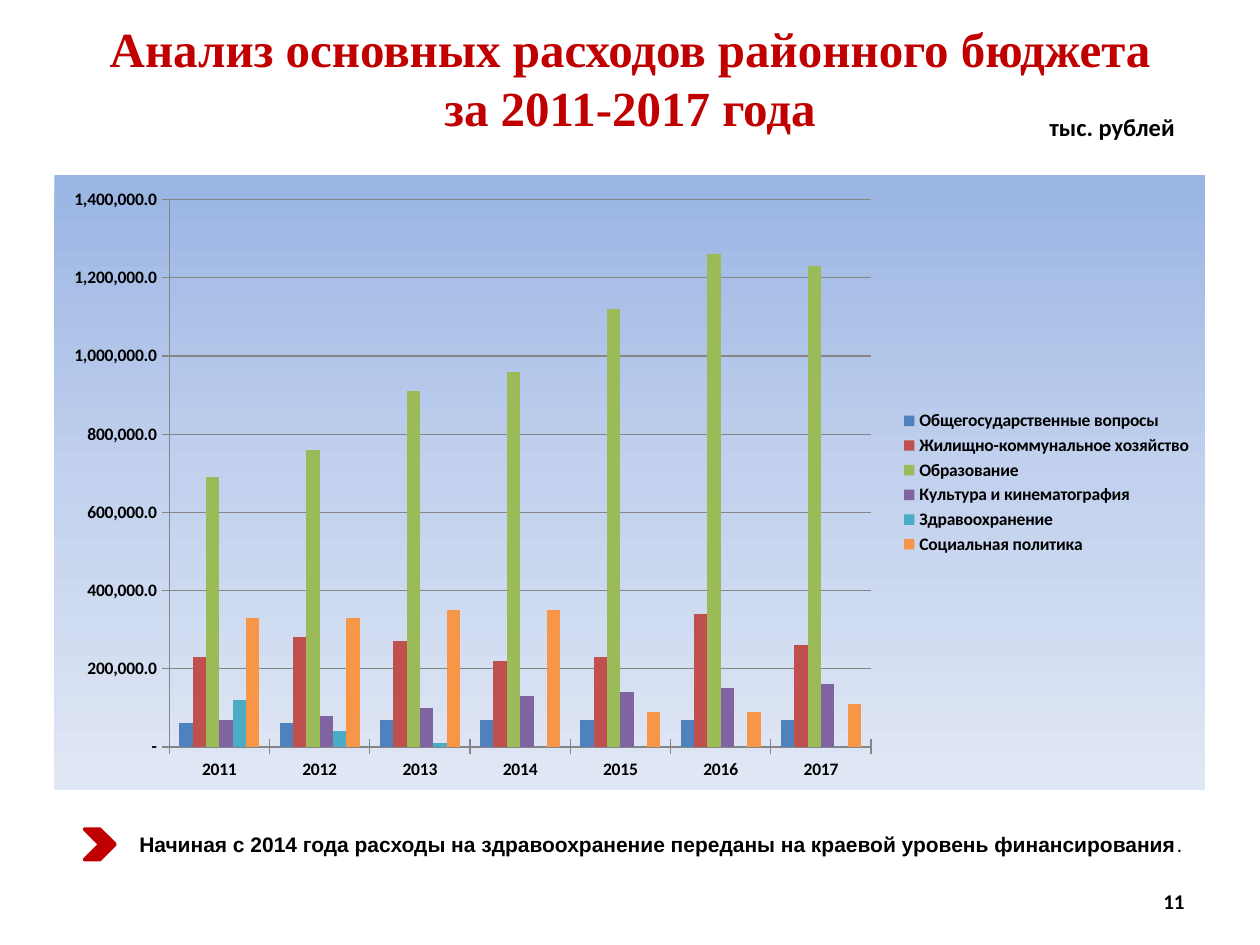
import dataclasses

import pptx
import pptx.chart.data
import pptx.dml.color
import pptx.enum.chart
import pptx.enum.shapes
import pptx.enum.text
import pptx.oxml
import pptx.util

Pt = pptx.util.Pt
RGB = pptx.dml.color.RGBColor.from_string
ALIGN = pptx.enum.text.PP_ALIGN
ANCHOR = pptx.enum.text.MSO_ANCHOR
CHART = pptx.enum.chart
NS = ('xmlns:c="http://schemas.openxmlformats.org/drawingml/2006/chart" '
      'xmlns:a="http://schemas.openxmlformats.org/drawingml/2006/main"')


@dataclasses.dataclass(frozen=True)
class Theme:
    accent: str = "C00000"
    ink: str = "000000"
    axis: str = "868686"
    series: tuple = ("4F81BD", "C0504D", "9BBB59", "8064A2", "4BACC6", "F79646")
    backdrop: tuple = ((0, "9AB5E4"), (50, "C2D1ED"), (100, "E1E8F5"))
    heading_font: str = "Times New Roman"
    body_font: str = "Calibri"
    note_font: str = "Arial"
    heading: int = 28
    unit: int = 14
    small: int = 12
    chart: int = 10


THEME = Theme()
YEARS = [str(year) for year in range(2011, 2018)]
# Thousands of thousand roubles, one value a year
SPENDING = {
    "Общегосударственные вопросы": (60, 60, 70, 70, 70, 70, 70),
    "Жилищно-коммунальное хозяйство": (230, 280, 270, 220, 230, 340, 260),
    "Образование": (690, 760, 910, 960, 1120, 1260, 1230),
    "Культура и кинематография": (70, 80, 100, 130, 140, 150, 160),
    "Здравоохранение": (120, 40, 10, 0, 0, 0, 0),
    "Социальная политика": (330, 330, 350, 350, 90, 90, 110),
}


def set_all(target, values):
    for name, value in values.items():
        setattr(target, name, value)


def style_font(font, face, size, color=THEME.ink, bold=True):
    set_all(font, {"name": face, "size": Pt(size), "bold": bold})
    font.color.rgb = RGB(color)


def add_label(slide, box, text, face, size, align, anchor=ANCHOR.MIDDLE, wrap=True):
    frame = slide.shapes.add_textbox(*map(Pt, box)).text_frame
    set_all(frame, {"word_wrap": wrap, "vertical_anchor": anchor})
    line = frame.paragraphs[0]
    line.alignment = align
    run = line.add_run()
    run.text = text
    style_font(run.font, face, size)
    return line


def add_heading(slide, box, lines):
    heading = slide.shapes.title
    set_all(heading, dict(zip(("left", "top", "width", "height"), map(Pt, box))))
    frame = heading.text_frame
    frame.text = "\n".join(lines)
    set_all(frame, {"word_wrap": True, "vertical_anchor": ANCHOR.MIDDLE,
                    "auto_size": pptx.enum.text.MSO_AUTO_SIZE.NONE})
    for line in frame.paragraphs:
        line.alignment = ALIGN.CENTER
        style_font(line.runs[0].font, THEME.heading_font, THEME.heading, THEME.accent)


def paint_backdrop(chart):
    stops = "".join(f'<a:gs pos="{at * 1000}"><a:srgbClr val="{color}"/></a:gs>'
                    for at, color in THEME.backdrop)
    chart._chartSpace.chart.addnext(pptx.oxml.parse_xml(
        f'<c:spPr {NS}><a:gradFill><a:gsLst>{stops}</a:gsLst>'
        '<a:lin ang="5400000" scaled="0"/></a:gradFill><a:ln><a:noFill/></a:ln></c:spPr>'))


def place_plot(chart, **shares):
    plot_area = chart._chartSpace.chart.plotArea
    for old in plot_area.xpath("c:layout"):
        plot_area.remove(old)
    sides = "".join(f'<c:{side} val="{share}"/>' for side, share in shares.items())
    plot_area.insert(0, pptx.oxml.parse_xml(
        f'<c:layout {NS}><c:manualLayout><c:layoutTarget val="inner"/>'
        f'<c:xMode val="edge"/><c:yMode val="edge"/>{sides}</c:manualLayout></c:layout>'))


def add_spending_chart(slide, box):
    spending = pptx.chart.data.CategoryChartData()
    spending.categories = YEARS
    for area, amounts in SPENDING.items():
        spending.add_series(area, [amount * 1000 for amount in amounts])
    chart = slide.shapes.add_chart(
        CHART.XL_CHART_TYPE.COLUMN_CLUSTERED, *map(Pt, box), spending).chart
    style_font(chart.font, THEME.body_font, THEME.chart)
    set_all(chart, {"has_title": False, "has_legend": True})
    set_all(chart.legend, {"position": CHART.XL_LEGEND_POSITION.RIGHT,
                           "include_in_layout": False})
    paint_backdrop(chart)
    place_plot(chart, x=0.1, y=0.04, w=0.61, h=0.89)

    # Columns
    columns = chart.plots[0]
    set_all(columns, {"gap_width": 150, "overlap": 0, "vary_by_categories": False})
    for area, color in zip(columns.series, THEME.series):
        area.format.fill.solid()
        area.format.fill.fore_color.rgb = RGB(color)
        area.invert_if_negative = False

    # Axes
    amounts = chart.value_axis
    set_all(amounts, {"minimum_scale": 0, "maximum_scale": 1400000,
                      "major_unit": 200000, "has_major_gridlines": True})
    set_all(amounts.tick_labels, {"number_format": '#,##0.0;[Red]\\-#,##0.0;"-"',
                                  "number_format_is_linked": False})
    for axis in (amounts, chart.category_axis):
        axis.major_tick_mark = CHART.XL_TICK_MARK.CROSS
    for part in (amounts, amounts.major_gridlines, chart.category_axis):
        part.format.line.color.rgb = RGB(THEME.axis)
        part.format.line.width = Pt(0.75)


def add_note(slide, box, text):
    left, top, _, height = box
    note = add_label(slide, box, text, THEME.note_font, THEME.small, ALIGN.JUSTIFY)
    note._p.get_or_add_pPr().set("indent", str(Pt(35)))
    stop = note.add_run()
    stop.text = "."
    style_font(stop.font, THEME.note_font, THEME.small, bold=False)

    # Marker, centred on the height of the note
    side = 17.5
    marker = slide.shapes.add_shape(
        pptx.enum.shapes.MSO_SHAPE.CHEVRON,
        Pt(left + 10.8), Pt(top + (height - side) / 2), Pt(side), Pt(side))
    marker.shadow.inherit = False
    marker.fill.solid()
    marker.fill.fore_color.rgb = RGB(THEME.accent)
    marker.line.color.rgb = RGB(THEME.accent)
    marker.line.width = Pt(2)


def main():
    deck = pptx.Presentation()
    set_all(deck, {"slide_width": Pt(720), "slide_height": Pt(540)})
    slide = deck.slides.add_slide(deck.slide_layouts[5])
    add_heading(slide, (0, 0, 720, 88),
                ("Анализ основных расходов районного бюджета", "за 2011-2017 года"))
    add_label(slide, (592.5, 60.5, 87, 24.5), "тыс. рублей", THEME.body_font,
              THEME.unit, ALIGN.LEFT, ANCHOR.TOP, wrap=False)
    add_spending_chart(slide, (31, 100, 657.5, 351.5))
    add_note(slide, (37.5, 471.5, 652.5, 22),
             "Начиная с 2014 года расходы на здравоохранение переданы "
             "на краевой уровень финансирования")
    # Slide number
    add_label(slide, (516, 500.5, 168, 29), "11", THEME.body_font, THEME.small, ALIGN.RIGHT)
    deck.save("out.pptx")


if __name__ == "__main__":
    main()
